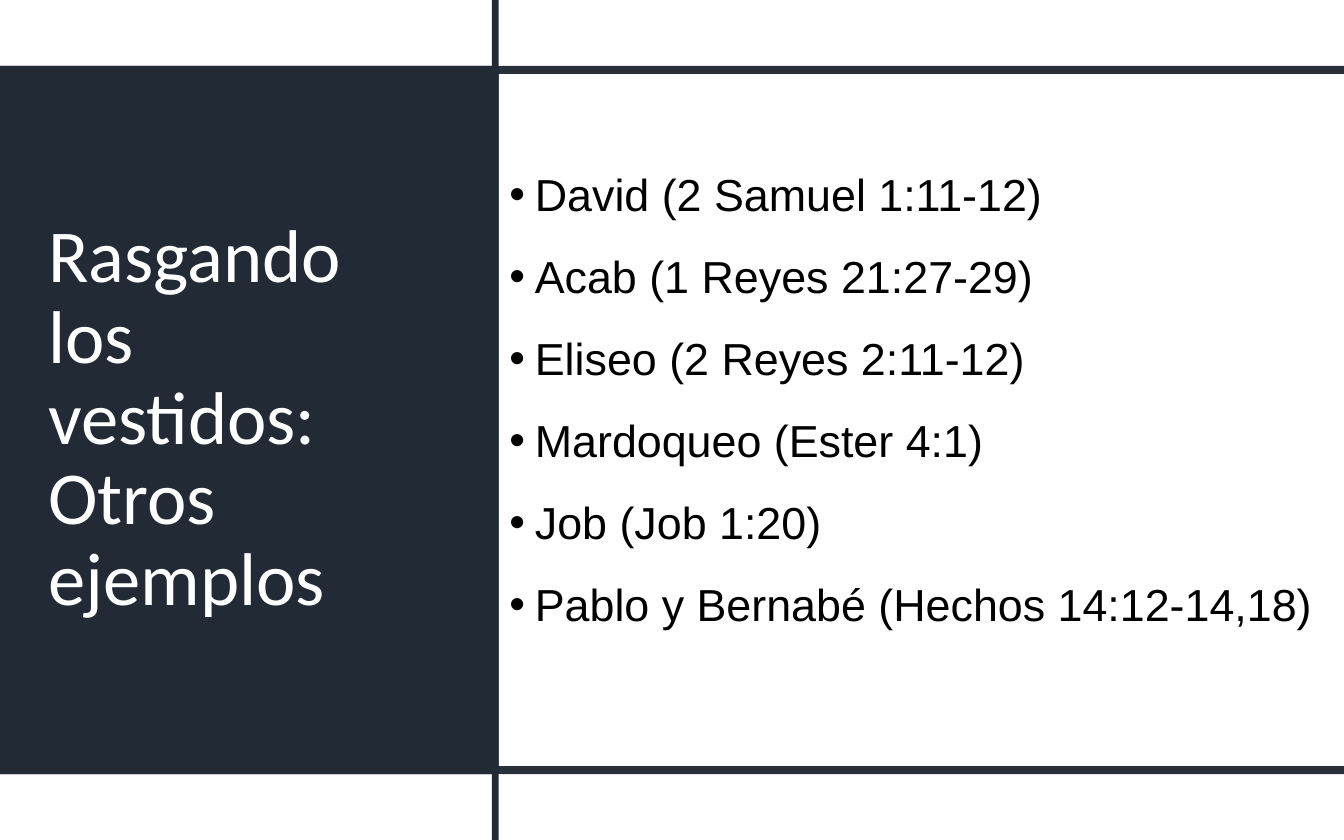
"""Build a slide with a dark title panel and a bulleted list of examples."""
from typing import NamedTuple

from lxml.etree import SubElement
from pptx import Presentation
from pptx.dml.color import RGBColor
from pptx.enum.shapes import MSO_SHAPE
from pptx.enum.text import MSO_ANCHOR, PP_ALIGN
from pptx.oxml.ns import qn
from pptx.util import Pt

PX = 9144
WIDE, HIGH = 1000, 625
NAVY, WHITE, BLACK = "222A35", "FFFFFF", "000000"
INSET, HANG = 8, 19


class Box(NamedTuple):
    left: int
    top: int
    width: int
    height: int


class Bar(NamedTuple):
    box: Box
    alpha: int = 100


class Copy(NamedTuple):
    box: Box
    lines: list[str]
    font: str
    size: int
    color: str
    before: int = 0
    bullet: str = ""


BARS = [
    Bar(Box(0, 49, 371, 527)),
    Bar(Box(0, 49, WIDE, 6), 97),
    Bar(Box(0, 570, WIDE, 6), 97),
    Bar(Box(366, 0, 5, HIGH)),
]
TEXTS = [
    Copy(Box(28, 133, 282, 359), ["Rasgando los vestidos: Otros ejemplos"],
         "Calibri", 40, WHITE),
    Copy(Box(371, 74, 620, 450),
         ["David (2 Samuel 1:11-12)", "Acab (1 Reyes 21:27-29)",
          "Eliseo (2 Reyes 2:11-12)", "Mardoqueo (Ester 4:1)",
          "Job (Job 1:20)", "Pablo y Bernabé (Hechos 14:12-14,18)"],
         "Arial", 24, BLACK, 18, "•"),
]


def tint(color: str) -> RGBColor:
    return RGBColor.from_string(color)


def scale(box: Box) -> list[int]:
    return [side * PX for side in box]


def draw_bar(slide, bar: Bar) -> None:
    shape = slide.shapes.add_shape(MSO_SHAPE.RECTANGLE, *scale(bar.box))
    shape.shadow.inherit = False
    shape.fill.solid()
    shape.fill.fore_color.rgb = tint(NAVY)
    shape.line.fill.background()
    if bar.alpha < 100:
        color = shape.fill._xPr.find(".//" + qn("a:srgbClr"))
        SubElement(color, qn("a:alpha"), val=str(bar.alpha * 1000))


def add_bullet(para, mark: str) -> None:
    props = para._p.get_or_add_pPr()
    props.set("marL", str(HANG * PX))
    props.set("indent", str(-HANG * PX))
    SubElement(props, qn("a:buFont"), typeface="Arial")
    SubElement(props, qn("a:buChar"), char=mark)


def draw_text(slide, copy: Copy) -> None:
    frame = slide.shapes.add_textbox(*scale(copy.box)).text_frame
    frame.word_wrap = True
    frame.vertical_anchor = MSO_ANCHOR.MIDDLE
    frame.margin_left = frame.margin_right = INSET * PX
    for index, line in enumerate(copy.lines):
        para = frame.add_paragraph() if index else frame.paragraphs[0]
        para.alignment = PP_ALIGN.LEFT
        para.line_spacing = 0.9
        para.space_before = Pt(copy.before)
        if copy.bullet:
            add_bullet(para, copy.bullet)
        run = para.add_run()
        run.text = line
        run.font.name = copy.font
        run.font.size = Pt(copy.size)
        run.font.color.rgb = tint(copy.color)


def main() -> None:
    deck = Presentation()
    deck.slide_width, deck.slide_height = WIDE * PX, HIGH * PX
    slide = deck.slides.add_slide(deck.slide_layouts[6])
    for bar in BARS:
        draw_bar(slide, bar)
    for copy in TEXTS:
        draw_text(slide, copy)
    deck.save("out.pptx")


if __name__ == "__main__":
    main()
